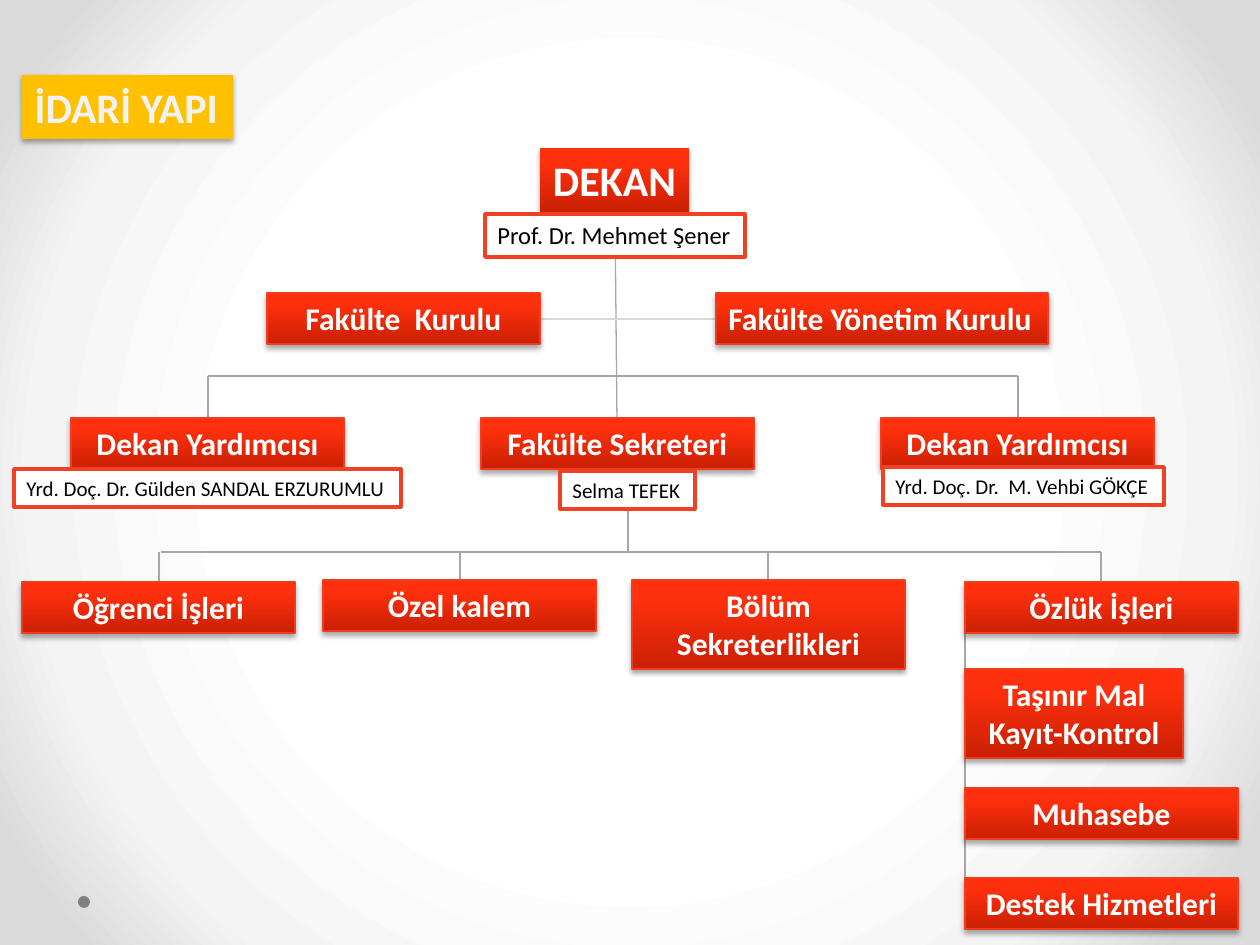
from pptx import Presentation
from pptx.dml.color import RGBColor
from pptx.enum.shapes import MSO_CONNECTOR, MSO_SHAPE
from pptx.enum.text import MSO_ANCHOR, MSO_AUTO_SIZE as FIT, PP_ALIGN
from pptx.oxml import parse_xml
from pptx.oxml.ns import nsdecls
from pptx.util import Pt

PX = 914400 / 126
WHITE = RGBColor(0xFF, 0xFF, 0xFF)
BLACK = RGBColor(0x00, 0x00, 0x00)
PALE = RGBColor(0xF2, 0xF2, 0xF2)
AMBER = RGBColor(0xFF, 0xC0, 0x00)
RED_EDGE = RGBColor(0xF1, 0x3C, 0x1E)
NAME_EDGE = RGBColor(0xF1, 0x41, 0x24)
GREY = RGBColor(0xA6, 0xA6, 0xA6)
LIGHT_GREY = RGBColor(0xD9, 0xD9, 0xD9)
DOT_GREY = RGBColor(0x80, 0x80, 0x80)
BACKDROP = [(50, "FFFFFF"), (76, "F4F4F4"), (92, "DADADA")]
RED_BLEND = [(0, "CB2004"), (80, "FF300D"), (100, "FF310F")]
SHADOW = f"""<a:effectLst {nsdecls('a')}>
  <a:outerShdw blurRad="39370" dist="22860" dir="5400000" rotWithShape="0">
    <a:srgbClr val="000000"><a:alpha val="35000"/></a:srgbClr>
  </a:outerShdw></a:effectLst>"""


def gradient(stops, direction):
    """Return the XML of a gradient fill."""
    marks = "".join(f'<a:gs pos="{at * 1000}"><a:srgbClr val="{color}"/></a:gs>'
                    for at, color in stops)
    return f'<a:gradFill {nsdecls("a")}><a:gsLst>{marks}</a:gsLst>{direction}</a:gradFill>'


def add_box(frame, text, size, color, fill=None, edge=None, edge_pt=0.75,
            bold=True, centred=True, wrap=True, shadow=True):
    """Add a text rectangle; without a fill colour it gets the red gradient."""
    box = slide.shapes.add_shape(MSO_SHAPE.RECTANGLE, *[round(v * PX) for v in frame])
    box.shadow.inherit = False
    props = box.element.spPr
    if fill is None:
        props.prstGeom.addnext(parse_xml(gradient(RED_BLEND, '<a:lin ang="16200000" scaled="0"/>')))
    else:
        box.fill.solid()
        box.fill.fore_color.rgb = fill
    if edge is None:
        box.line.fill.background()
    else:
        box.line.color.rgb = edge
        box.line.width = Pt(edge_pt)
    if shadow:
        box.shadow.inherit = True
        props.append(parse_xml(SHADOW))
    body = box.text_frame
    body.word_wrap = wrap
    body.auto_size = FIT.SHAPE_TO_FIT_TEXT
    body.vertical_anchor = MSO_ANCHOR.TOP
    para = body.paragraphs[0]
    para.alignment = PP_ALIGN.CENTER if centred else PP_ALIGN.LEFT
    span = para.add_run()
    span.text = text
    span.font.name = "Calibri"
    span.font.size = Pt(size)
    span.font.bold = bold
    span.font.color.rgb = color


deck = Presentation()
deck.slide_width, deck.slide_height = round(1260 * PX), round(945 * PX)
slide = deck.slides.add_slide(deck.slide_layouts[6])

centre = '<a:path path="circle"><a:fillToRect l="50000" t="50000" r="50000" b="50000"/></a:path>'
slide.element.cSld.insert(0, parse_xml(
    f'<p:bg {nsdecls("p", "a")}><p:bgPr>{gradient(BACKDROP, centre)}<a:effectLst/></p:bgPr></p:bg>'))

dot = slide.shapes.add_shape(MSO_SHAPE.OVAL, *[round(v * PX) for v in (78, 896, 12, 12)])
dot.shadow.inherit = False
dot.fill.solid()
dot.fill.fore_color.rgb = DOT_GREY
dot.line.fill.background()

# Connecting lines: from x, from y, to x, to y
DEPUTY_BUS, DEPUTY_TOP = 376, 418
OFFICE_BUS, OFFICE_TOP = 552, 581
STACK_X = 965
lines = [
    (615, 212, 617, DEPUTY_TOP),
    (540, 319, 716, 319),
    (208, DEPUTY_BUS, 1018, DEPUTY_BUS),
    (628, 509, 628, OFFICE_BUS),
    (161, OFFICE_BUS, 1101, OFFICE_BUS),
]
lines += [(x, DEPUTY_BUS, x, DEPUTY_TOP) for x in (208, 1018)]
lines += [(x, OFFICE_BUS, x, OFFICE_TOP) for x in (159, 460, 768, 1101)]
lines += [(STACK_X, top, STACK_X, bottom) for top, bottom in ((633, 670), (758, 788), (839, 878))]
for ends in lines:
    link = slide.shapes.add_connector(MSO_CONNECTOR.STRAIGHT, *[round(v * PX) for v in ends])
    link.line.color.rgb = LIGHT_GREY if ends[1] == 319 else GREY
    link.line.width = Pt(0.75)
    link.element.spPr.append(parse_xml(f'<a:effectLst {nsdecls("a")}/>'))

add_box((22, 75, 211, 64), "İDARİ YAPI", 24, PALE, fill=AMBER, centred=False, wrap=False)
add_box((540, 148, 149, 64), "DEKAN", 24, WHITE, wrap=False)
add_box((716, 293, 332, 51), "Fakülte Yönetim Kurulu", 18, WHITE,
        edge=RED_EDGE, centred=False, wrap=False)

WIDE, ONE_LINE, TWO_LINES = 273, 51, 89
units = [
    (267, 293, WIDE, ONE_LINE, "Fakülte  Kurulu"),
    (71, DEPUTY_TOP, WIDE, ONE_LINE, "Dekan Yardımcısı"),
    (881, DEPUTY_TOP, WIDE, ONE_LINE, "Dekan Yardımcısı"),
    (481, DEPUTY_TOP, WIDE, ONE_LINE, "Fakülte Sekreteri"),
    (22, 582, WIDE, ONE_LINE, "Öğrenci İşleri"),
    (323, 580, WIDE, ONE_LINE, "Özel kalem"),
    (632, 580, WIDE, TWO_LINES, "Bölüm Sekreterlikleri"),
    (STACK_X, 582, WIDE, ONE_LINE, "Özlük İşleri"),
    (STACK_X, 669, 218, TWO_LINES, "Taşınır Mal Kayıt-Kontrol"),
    (STACK_X, 788, WIDE, ONE_LINE, "Muhasebe"),
    (STACK_X, 878, WIDE, ONE_LINE, "Destek Hizmetleri"),
]
for *frame, text in units:
    add_box(frame, text, 18, WHITE, edge=RED_EDGE)

people = [
    (485, 214, 260, 43, "Prof. Dr. Mehmet Şener", 14),
    (14, 469, 387, 38, "Yrd. Doç. Dr. Gülden SANDAL ERZURUMLU", 12),
    (560, 471, 135, 38, "Selma TEFEK", 12),
    (883, 467, 281, 38, "Yrd. Doç. Dr.  M. Vehbi GÖKÇE", 12),
]
for *frame, text, size in people:
    add_box(frame, text, size, BLACK, fill=WHITE, edge=NAME_EDGE, edge_pt=2,
            bold=False, centred=False, wrap=False, shadow=False)

deck.save("out.pptx")
